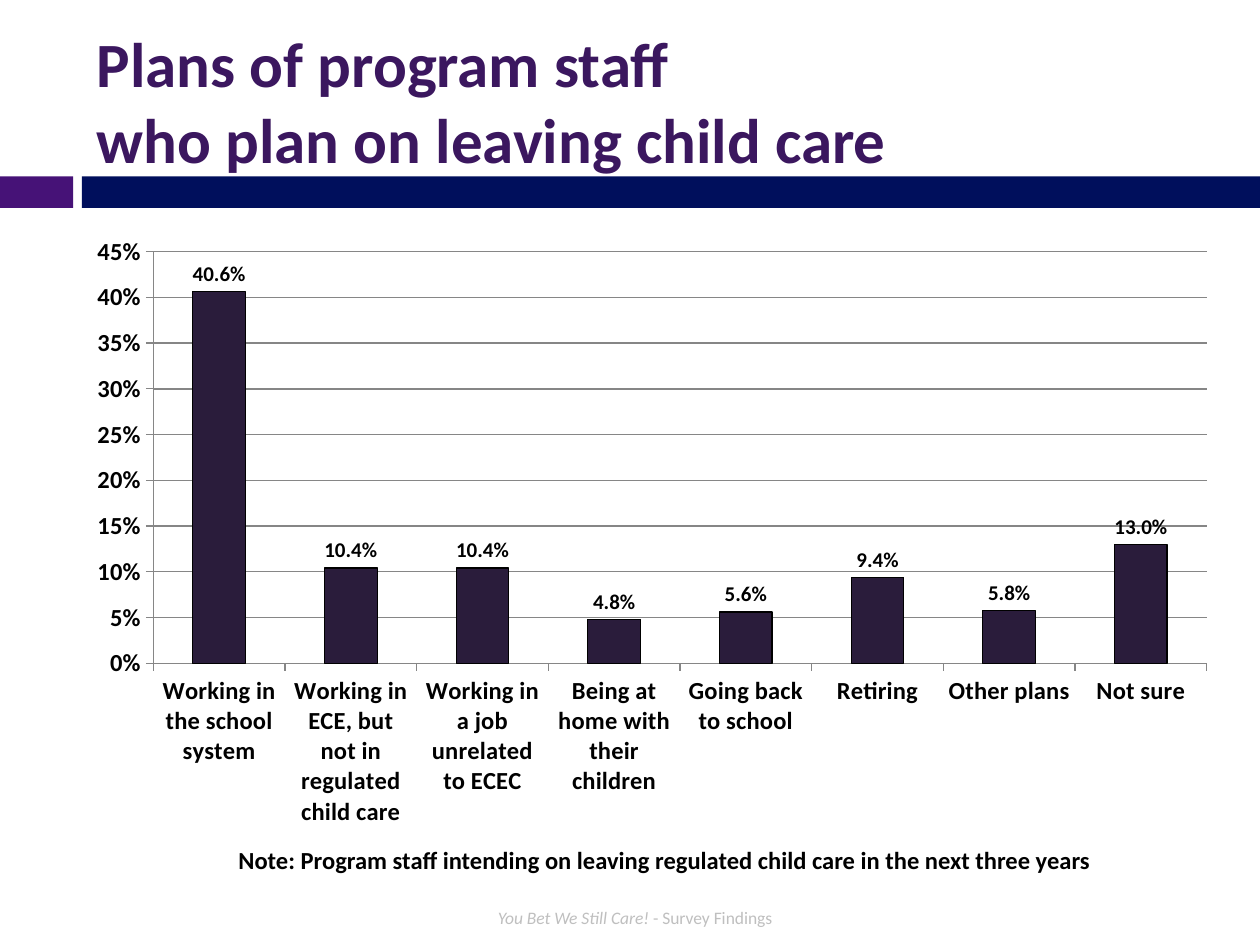
from dataclasses import dataclass

from pptx import Presentation
from pptx.chart.data import CategoryChartData
from pptx.dml.color import RGBColor
from pptx.enum.chart import XL_CHART_TYPE, XL_LABEL_POSITION, XL_TICK_MARK
from pptx.enum.shapes import MSO_SHAPE
from pptx.enum.text import MSO_ANCHOR, PP_ALIGN
from pptx.util import Inches, Pt

RECT = MSO_SHAPE.RECTANGLE
COLUMN = XL_CHART_TYPE.COLUMN_CLUSTERED
OUT_END = XL_LABEL_POSITION.OUTSIDE_END
TICK_OUT = XL_TICK_MARK.OUTSIDE
TICK_NONE = XL_TICK_MARK.NONE
LEFT, CENTER = PP_ALIGN.LEFT, PP_ALIGN.CENTER
TOP, MIDDLE = MSO_ANCHOR.TOP, MSO_ANCHOR.MIDDLE


@dataclass(frozen=True)
class Theme:
    font: str = "Calibri"
    title: str = "3B175F"
    accent: str = "461277"
    band: str = "000F5C"
    bar: str = "2A1C3B"
    ink: str = "000000"
    grid: str = "868686"
    muted: str = "BFBFBF"
    title_size: int = 36
    body_size: int = 14
    label_size: int = 12
    foot_size: int = 10


THEME = Theme()

PLANS = {
    "Working in the school system": 0.406,
    "Working in ECE, but not in regulated child care": 0.104,
    "Working in a job unrelated to ECEC": 0.104,
    "Being at home with their children": 0.048,
    "Going back to school": 0.056,
    "Retiring": 0.094,
    "Other plans": 0.058,
    "Not sure": 0.13,
}


def rgb(color):
    return RGBColor.from_string(color)


def set_font(font, size, color, bold=False, italic=False):
    font.name = THEME.font
    font.size = Pt(size)
    font.color.rgb = rgb(color)
    font.bold = bold
    font.italic = italic


def add_band(slide, left, width, color):
    band = slide.shapes.add_shape(
        RECT, Inches(left), Inches(1.4), Inches(width), Inches(0.25))
    band.shadow.inherit = False
    band.fill.solid()
    band.fill.fore_color.rgb = rgb(color)
    band.line.fill.background()


def add_text(slide, box, lines, size, color, align=CENTER, anchor=TOP):
    frame = slide.shapes.add_textbox(*map(Inches, box)).text_frame
    frame.word_wrap = True
    frame.vertical_anchor = anchor
    for index, runs in enumerate(lines):
        para = frame.add_paragraph() if index else frame.paragraphs[0]
        para.alignment = align
        for text, bold, italic in runs:
            run = para.add_run()
            run.text = text
            set_font(run.font, size, color, bold, italic)


def style_axis(axis):
    axis.major_tick_mark = TICK_OUT
    axis.minor_tick_mark = TICK_NONE
    axis.format.line.color.rgb = rgb(THEME.grid)
    axis.format.line.width = Pt(0.75)
    set_font(axis.tick_labels.font, THEME.body_size, THEME.ink, True)


def add_plot(slide, box):
    data = CategoryChartData(number_format="0.0%")
    data.categories = PLANS.keys()
    data.add_series("Series 1", PLANS.values())
    chart = slide.shapes.add_chart(COLUMN, *map(Inches, box), data).chart
    chart.has_legend = False
    chart.has_title = False
    set_font(chart.font, THEME.body_size, THEME.ink, True)

    style_axis(chart.category_axis)
    axis = chart.value_axis
    style_axis(axis)
    axis.minimum_scale, axis.maximum_scale, axis.major_unit = 0, 0.45, 0.05
    axis.tick_labels.number_format = "0%"
    axis.tick_labels.number_format_is_linked = False
    axis.has_major_gridlines = True
    grid = axis.major_gridlines.format.line
    grid.color.rgb = rgb(THEME.grid)
    grid.width = Pt(0.75)

    plot = chart.plots[0]
    plot.gap_width = 150
    plot.vary_by_categories = False
    bars = plot.series[0]
    bars.invert_if_negative = False
    bars.format.fill.solid()
    bars.format.fill.fore_color.rgb = rgb(THEME.bar)
    bars.format.line.color.rgb = rgb(THEME.ink)
    bars.format.line.width = Pt(0.75)

    labels = bars.data_labels
    labels.show_value = True
    labels.position = OUT_END
    labels.number_format = "0.0%"
    labels.number_format_is_linked = False
    set_font(labels.font, THEME.label_size, THEME.ink, True)


def main():
    deck = Presentation()
    deck.slide_width, deck.slide_height = Inches(10), Inches(7.5)
    slide = deck.slides.add_slide(deck.slide_layouts[6])

    add_band(slide, 0, 0.58, THEME.accent)
    add_band(slide, 0.65, 9.35, THEME.band)
    add_text(
        slide, (1.14, 6.66, 8.27, 0.34),
        [[("Note: Program staff intending on leaving regulated child care "
           "in the next three years", True, False)]],
        THEME.body_size, THEME.ink)
    add_plot(slide, (0.59, 1.78, 9.17, 4.88))
    add_text(
        slide, (3.5, 7.14, 3.08, 0.29),
        [[("You Bet We Still Care! ", False, True),
          ("- Survey Findings", False, False)]],
        THEME.foot_size, THEME.muted, anchor=MIDDLE)
    add_text(
        slide, (0.67, 0.14, 8.92, 1.31),
        [[("Plans of program staff", True, False)],
         [("who plan on leaving child care", True, False)]],
        THEME.title_size, THEME.title, LEFT, MIDDLE)
    deck.save("out.pptx")


if __name__ == "__main__":
    main()
